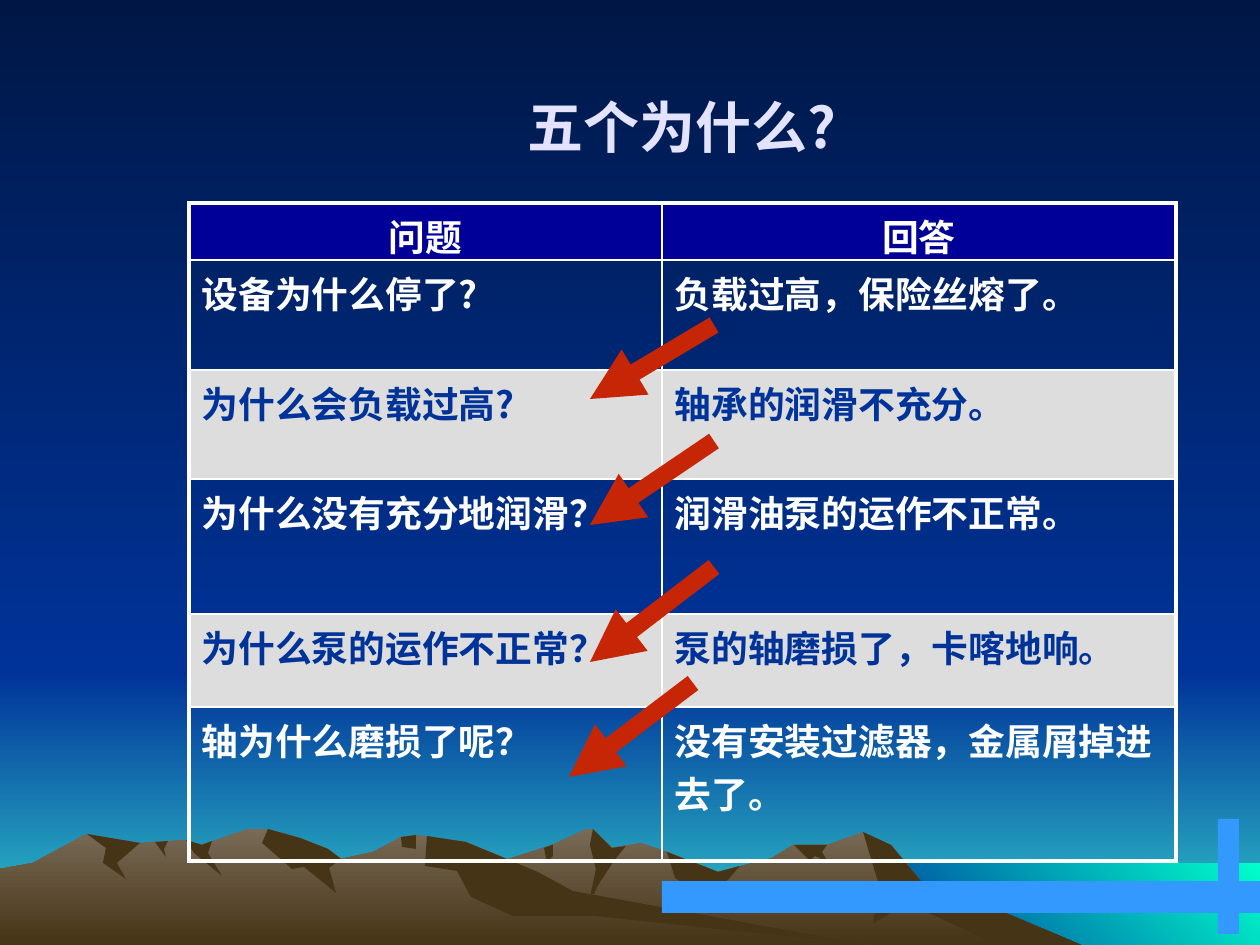
from dataclasses import dataclass
from itertools import pairwise

from lxml.etree import SubElement
from pptx import Presentation
from pptx.dml.color import RGBColor
from pptx.enum.shapes import MSO_CONNECTOR, MSO_SHAPE
from pptx.enum.text import MSO_ANCHOR, PP_ALIGN
from pptx.oxml.ns import qn
from pptx.util import Emu, Pt

SCALE = 914400 / 126
W, H = 1260, 945


@dataclass(frozen=True)
class Theme:
    """Colours, type sizes and line widths of the slide."""
    font: str = "Noto Sans CJK SC"
    title_size: int = 32
    cell_size: int = 21
    title: str = "E3E3FF"
    white: str = "FFFFFF"
    header: str = "000099"
    band: str = "DDDDDD"
    navy: str = "001746"
    blue: str = "003399"
    teal: str = "33CCCC"
    mint: str = "00FFCC"
    bar: str = "3399FF"
    rock: str = "463416"
    rock_light: str = "786A56"
    arrow: str = "C62606"
    arrow_width: int = 10
    frame_width: float = 2.25
    grid_width: float = 1


@dataclass(frozen=True)
class Gully:
    """A dark slope under the crest from left to right, with its lower corners."""
    left: int
    right: int
    feet: tuple


@dataclass(frozen=True)
class Ridge:
    """A mountain range: its crest from left to right, and its gullies."""
    crest: tuple
    gullies: tuple

    def height_at(self, x):
        """Find the crest's y at x between its two neighbouring points."""
        for (x1, y1), (x2, y2) in pairwise(self.crest):
            if x1 <= x <= x2:
                return round(y1 + (y2 - y1) * (x - x1) / (x2 - x1))

    def slope(self, gully):
        """Outline a gully: along the crest, then back over its feet."""
        inner = [pt for pt in self.crest if gully.left < pt[0] < gully.right]
        start, end = ((x, self.height_at(x)) for x in (gully.left, gully.right))
        return [start, *inner, end, *gully.feet]


T = Theme()
EAST_RIDGE = Ridge(
    crest=((325, 945), (412, 893), (496, 863), (552, 845), (586, 829), (593, 829),
           (612, 848), (641, 843), (667, 852), (718, 872), (772, 858), (793, 845),
           (827, 845), (863, 832), (891, 845), (925, 886), (971, 912), (1003, 912),
           (1081, 945)),
    gullies=(
        Gully(863, 1081, ((998, 945), (907, 903), (873, 924), (879, 885))),
        Gully(593, 626, ((614, 861), (597, 887), (586, 916), (596, 869), (590, 845))),
        Gully(667, 740, ((726, 882), (731, 911), (675, 878))),
        Gully(794, 827, ((822, 852), (828, 862), (815, 856), (810, 861))),
        Gully(544, 553, ((553, 856), (547, 862)))))
WEST_RIDGE = Ridge(
    crest=((0, 869), (33, 863), (86, 834), (140, 843), (186, 840), (202, 845),
           (247, 829), (268, 829), (300, 838), (328, 849), (341, 859), (373, 852),
           (401, 837), (417, 835), (466, 842), (538, 872), (573, 891), (869, 945)),
    gullies=(
        Gully(268, 341, ((329, 868), (336, 893), (304, 867), (292, 869), (262, 843))),
        Gully(427, 869, ((595, 916), (513, 916), (471, 897), (457, 871), (425, 866))),
        Gully(401, 416, ((416, 849), (402, 847))),
        Gully(186, 212, ((208, 853), (222, 876), (194, 853))),
        Gully(155, 168, ((164, 849), (166, 857))),
        Gully(87, 140, ((117, 863), (126, 879), (103, 863), (106, 848)))))
ROWS = [
    ("问题", "回答"),
    ("设备为什么停了?", "负载过高，保险丝熔了。"),
    ("为什么会负载过高?", "轴承的润滑不充分。"),
    ("为什么没有充分地润滑？", "润滑油泵的运作不正常。"),
    ("为什么泵的运作不正常？", "泵的轴磨损了，卡喀地响。"),
    ("轴为什么磨损了呢？", "没有安装过滤器，金属屑掉进去了。")]
COL_WIDTHS = [473, 514]
ROW_HEIGHTS = [57, 110, 109, 135, 93, 154]
ARROW_REACH = 124
ARROW_STARTS_AND_DROPS = [(525, 122, 74), (525, 238, 84), (525, 364, 95), (504, 480, 94)]


def px(n):
    """Turn px into EMU."""
    return Emu(round(n * SCALE))


def rgb(color):
    """Turn a hex string into a colour."""
    return RGBColor.from_string(color)


def paint(fill, colors, angle=270):
    """Fill with one colour, or with a gradient between two."""
    if len(colors) == 1:
        fill.solid()
        fill.fore_color.rgb = rgb(colors[0])
        return
    fill.gradient()
    fill.gradient_angle = angle
    for stop, color in zip(fill.gradient_stops, colors):
        stop.color.rgb = rgb(color)


def finish(sp, colors, angle=270):
    """Paint a shape and take away its line and shadow."""
    sp.shadow.inherit = False
    sp.line.fill.background()
    paint(sp.fill, colors, angle)


def add_rect(slide, box, *colors, angle=270):
    """Add a painted rectangle."""
    finish(slide.shapes.add_shape(MSO_SHAPE.RECTANGLE, *map(px, box)), colors, angle)


def add_outline(slide, x, y, points, *colors):
    """Add a painted closed outline, shifted to x and y."""
    start, *rest = [(x + a, y + b) for a, b in points]
    fb = slide.shapes.build_freeform(*start, scale=SCALE)
    fb.add_line_segments(rest, close=True)
    finish(fb.convert_to_shape(), colors)


def set_text(p, text, size, color, align):
    """Write one bold paragraph."""
    p.text = text
    p.alignment = align
    p.font.size = Pt(size)
    p.font.bold = True
    p.font.color.rgb = rgb(color)
    p.font.name = T.font
    SubElement(p._p.pPr.find(qn("a:defRPr")), qn("a:ea")).set("typeface", T.font)


def add_sky(slide, x, y, w, h, horizon):
    """Draw the sky above and below the horizon, and the bright corner."""
    paint(slide.background.fill, (T.navy, T.blue))
    add_rect(slide, (x, y + horizon, w, h - horizon), T.blue, T.teal)
    add_rect(slide, (x, y, w, horizon), T.navy, T.blue)
    add_rect(slide, (x + 861, y + 863, w - 861, h - 863), T.blue, T.mint, angle=45)


def add_ridge(slide, x, y, h, ridge):
    """Draw a range from its crest down to the ground, then its gullies."""
    ground = [(ridge.crest[-1][0], h), (ridge.crest[0][0], h)]
    add_outline(slide, x, y, [*ridge.crest, *ground], T.rock_light, T.rock)
    for gully in ridge.gullies:
        add_outline(slide, x, y, ridge.slope(gully), T.rock)


def add_bars(slide, x, y, w):
    """Draw the crossing bars of the lower right corner."""
    add_rect(slide, (x + 662, y + 881, w - 662, 32), T.bar)
    add_rect(slide, (x + 1218, y + 819, 21, 115), T.bar)


def add_title(slide, x, y, w, h):
    """Write the title in the middle of its box."""
    tf = slide.shapes.add_textbox(px(x), px(y), px(w), px(h)).text_frame
    tf.word_wrap = True
    tf.vertical_anchor = MSO_ANCHOR.MIDDLE
    set_text(tf.paragraphs[0], "五个为什么?", T.title_size, T.title, PP_ALIGN.CENTER)


def set_borders(cell, outer):
    """Draw the four sides of a cell, the outer ones thicker."""
    tcPr = cell._tc.get_or_add_tcPr()
    for side in "LRTB":
        width = T.frame_width if side in outer else T.grid_width
        ln = SubElement(tcPr, qn(f"a:ln{side}"), w=str(Pt(width)))
        SubElement(SubElement(ln, qn("a:solidFill")), qn("a:srgbClr"), val=T.white)


def add_questions(slide, x, y, w, h):
    """Build the table of questions and answers."""
    tbl = slide.shapes.add_table(len(ROWS), 2, px(x), px(y), px(w), px(h)).table
    tbl.first_row = tbl.horz_banding = False
    for col, width in zip(tbl.columns, COL_WIDTHS):
        col.width = px(width)
    for i, (row, height) in enumerate(zip(ROWS, ROW_HEIGHTS)):
        tbl.rows[i].height = px(height)
        header, banded = i == 0, i in (2, 4)
        for j, text in enumerate(row):
            cell = tbl.cell(i, j)
            set_borders(cell, "LR"[j] + {0: "T", len(ROWS) - 1: "B"}.get(i, ""))
            if header or banded:
                paint(cell.fill, (T.header if header else T.band,))
            else:
                cell.fill.background()
            if header:
                cell.margin_bottom = 0
            set_text(cell.text_frame.paragraphs[0], text, T.cell_size,
                     T.blue if banded else T.white,
                     PP_ALIGN.CENTER if header else PP_ALIGN.LEFT)


def add_arrows(slide, x, y):
    """Lead each answer to the next question."""
    for left, top, drop in ARROW_STARTS_AND_DROPS:
        x1, y1 = x + left, y + top
        ends = map(px, (x1, y1, x1 - ARROW_REACH, y1 + drop))
        cxn = slide.shapes.add_connector(MSO_CONNECTOR.STRAIGHT, *ends)
        cxn.line.color.rgb = rgb(T.arrow)
        cxn.line.width = Pt(T.arrow_width)
        SubElement(cxn.line._get_or_add_ln(), qn("a:tailEnd"), type="triangle")
        SubElement(cxn._element.spPr, qn("a:effectLst"))


def main():
    """Build and save the slide."""
    prs = Presentation()
    prs.slide_width, prs.slide_height = px(W), px(H)
    slide = prs.slides.add_slide(prs.slide_layouts[6])
    add_sky(slide, 0, 0, W, H, horizon=672)
    for ridge in (EAST_RIDGE, WEST_RIDGE):
        add_ridge(slide, 0, 0, H, ridge)
    add_bars(slide, 0, 0, W)
    add_title(slide, 451, 84, 462, 84)
    add_questions(slide, 189, 203, sum(COL_WIDTHS), sum(ROW_HEIGHTS))
    add_arrows(slide, 189, 203)
    prs.save("out.pptx")


if __name__ == "__main__":
    main()
